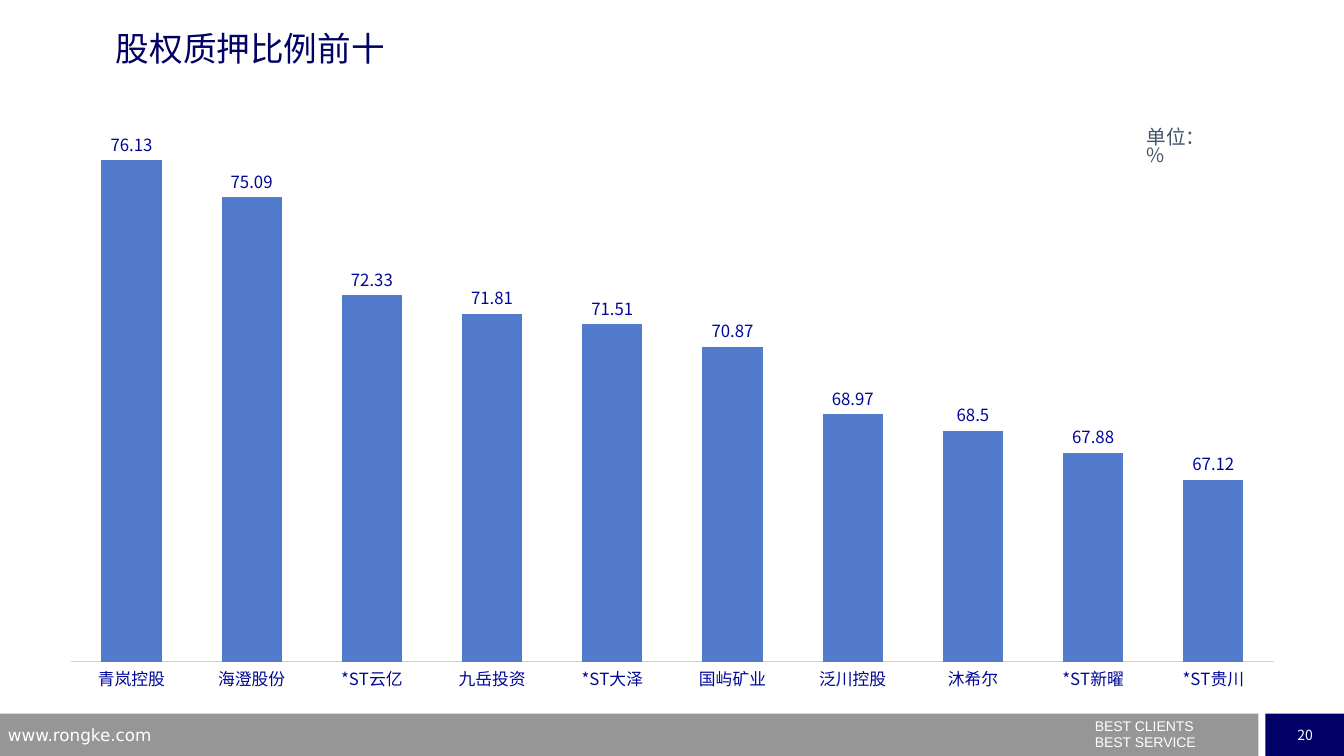
import pptx
import pptx.chart.data
import pptx.dml.color
import pptx.enum.chart
import pptx.enum.shapes
import pptx.enum.text
import pptx.oxml
import pptx.oxml.ns
import pptx.util
from lxml import etree

Inches = pptx.util.Inches
Pt = pptx.util.Pt


def colour(value):
    return pptx.dml.color.RGBColor.from_string(value)


class Deck:
    CJK = "Noto Sans CJK SC"
    NAVY = "000066"
    GREY = "969696"
    WHITE = "FFFFFF"
    SLATE = "44546A"
    LABEL = "000798"
    BAR = "527BCB"
    AXIS = "C9CCFF"

    def __init__(self):
        self.presentation = pptx.Presentation()
        self.presentation.slide_width = Inches(13.33)
        self.presentation.slide_height = Inches(7.5)
        self.slide = self.presentation.slides.add_slide(self.presentation.slide_layouts[6])

    def style(self, font, size, shade, face=CJK):
        font.size = Pt(size)
        font.color.rgb = colour(shade)
        font.name = face
        east_asian = etree.SubElement(font._element, pptx.oxml.ns.qn("a:ea"))
        east_asian.set("typeface", face)

    def fill_text(self, frame, text, size, shade, face=CJK):
        frame.text = text
        for paragraph in frame.paragraphs:
            for run in paragraph.runs:
                self.style(run.font, size, shade, face)

    def bar(self, left, width, fill):
        bar = self.slide.shapes.add_shape(
            pptx.enum.shapes.MSO_SHAPE.RECTANGLE,
            Inches(left), Inches(7.08), Inches(width), Inches(0.42))
        bar.shadow.inherit = False
        bar.fill.solid()
        bar.fill.fore_color.rgb = colour(fill)
        bar.line.fill.background()
        return bar

    def text(self, box, text, size, shade, face=CJK, insets=None):
        frame = self.slide.shapes.add_textbox(*map(Inches, box)).text_frame
        frame.word_wrap = True
        if insets:
            (frame.margin_left, frame.margin_top,
             frame.margin_right, frame.margin_bottom) = map(Inches, insets)
        self.fill_text(frame, text, size, shade, face)
        return frame

    def column_chart(self, box, plot_area, ratios, scale):
        data = pptx.chart.data.CategoryChartData()
        data.categories = list(ratios)
        data.add_series("Series 1", list(ratios.values()))
        chart = self.slide.shapes.add_chart(
            pptx.enum.chart.XL_CHART_TYPE.COLUMN_CLUSTERED,
            *map(Inches, box), data).chart
        chart.has_legend = False
        chart.has_title = False
        self.style(chart.font, 12, self.LABEL)

        value_axis = chart.value_axis
        value_axis.minimum_scale, value_axis.maximum_scale = scale
        value_axis.has_major_gridlines = False
        value_axis.visible = False

        category_axis = chart.category_axis
        category_axis.major_tick_mark = pptx.enum.chart.XL_TICK_MARK.NONE
        category_axis.format.line.color.rgb = colour(self.AXIS)
        category_axis.format.line.width = Pt(0.75)
        self.style(category_axis.tick_labels.font, 12, self.LABEL)

        plot = chart.plots[0]
        plot.vary_by_categories = False
        plot.gap_width = 100
        plot.overlap = -24
        columns = plot.series[0].format.fill
        columns.solid()
        columns.fore_color.rgb = colour(self.BAR)
        plot.has_data_labels = True
        labels = plot.data_labels
        labels.show_value = True
        labels.position = pptx.enum.chart.XL_LABEL_POSITION.OUTSIDE_END
        self.style(labels.font, 12, self.LABEL)
        self.place_plot(chart, plot_area)

    def place_plot(self, chart, plot_area):
        area = chart._chartSpace.chart.plotArea
        for automatic in area.findall(pptx.oxml.ns.qn("c:layout")):
            area.remove(automatic)
        settings = [("layoutTarget", "inner"), ("xMode", "edge"), ("yMode", "edge")]
        settings += zip("xywh", plot_area)
        entries = "".join(f'<c:{key} val="{value}"/>' for key, value in settings)
        area.insert(0, pptx.oxml.parse_xml(
            f'<c:layout {pptx.oxml.ns.nsdecls("c")}>'
            f"<c:manualLayout>{entries}</c:manualLayout></c:layout>"))


def main():
    deck = Deck()

    deck.bar(0, 12.48, deck.GREY)
    page_number = deck.bar(12.55, 0.79, deck.NAVY).text_frame
    page_number.word_wrap = False
    page_number.vertical_anchor = pptx.enum.text.MSO_ANCHOR.MIDDLE
    deck.fill_text(page_number, "20", 10, deck.WHITE)
    page_number.paragraphs[0].alignment = pptx.enum.text.PP_ALIGN.CENTER

    slogan = deck.text((10.76, 7.14, 2.56, 0.36), "BEST CLIENTS\nBEST SERVICE",
                       10, deck.WHITE, "Arial")
    for line in slogan.paragraphs:
        line.line_spacing = 0.5
    slogan.paragraphs[1].space_before = Pt(5.75)
    deck.text((-0.02, 7.14, 3.22, 0.26), "www.rongke.com", 12, deck.WHITE, "DejaVu Sans")

    deck.text((1.15, 0.28, 9, 0.42), "股权质押比例前十", 24, deck.NAVY, insets=(0, 0, 0, 0))
    unit = deck.text((11.37, 1.28, 0.81, 0.24), "单位：%", 14, deck.SLATE,
                     insets=(0, 0, 0.15, 0))
    unit.paragraphs[0].line_spacing = 0.8

    pledge_ratios = {
        "青岚控股": 76.13, "海澄股份": 75.09, "*ST云亿": 72.33, "九岳投资": 71.81,
        "*ST大泽": 71.51, "国屿矿业": 70.87, "泛川控股": 68.97, "沐希尔": 68.5,
        "*ST新曜": 67.88, "*ST贵川": 67.12,
    }
    deck.column_chart((0.46, 0.81, 12.42, 6.19), (0.02, 0.02, 0.96, 0.91),
                      pledge_ratios, (62, 78))

    deck.presentation.save("out.pptx")


if __name__ == "__main__":
    main()
